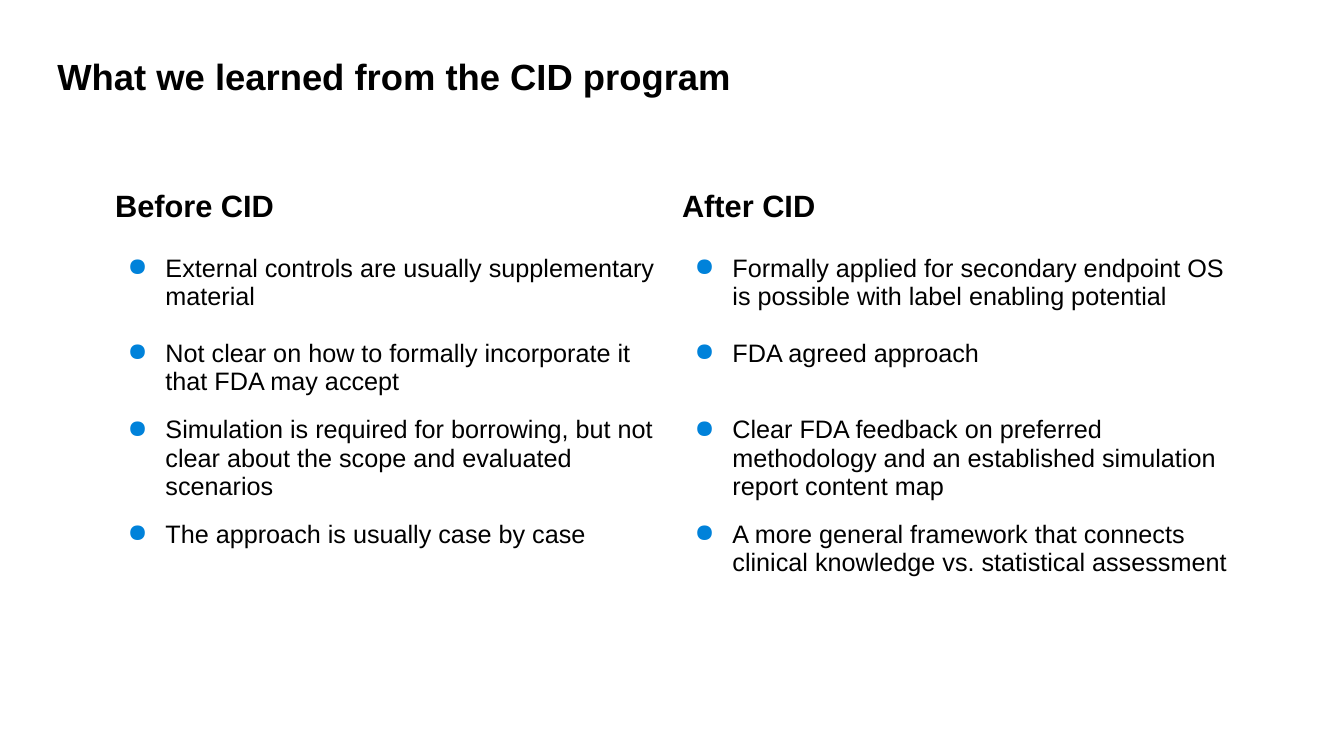
import pptx
import pptx.util
import pptx.dml.color
import pptx.enum.text
from lxml import etree

Pt = pptx.util.Pt

TITLE = "What we learned from the CID program"
HEADINGS = ["Before CID", "After CID"]
ROWS = [
    (
        ["External controls are usually supplementary material",
         "Not clear on how to formally incorporate it that FDA may accept"],
        ["Formally applied for secondary endpoint OS is possible with label enabling potential",
         "FDA agreed approach"],
    ),
    (
        ["Simulation is required for borrowing, but not clear about the scope and evaluated scenarios"],
        ["Clear FDA feedback on preferred methodology and an established simulation report content map"],
    ),
    (
        ["The approach is usually case by case"],
        ["A more general framework that connects clinical knowledge vs. statistical assessment"],
    ),
]
BLACK = "000000"
BULLET_BLUE = "0082DA"
COLUMN_WIDTH = 405
HEADING_HEIGHT = 46.8
ROW_HEIGHT = 57
CELL_MARGIN = 7.2
LINE_GAP = 20.1


def color(value):
    return pptx.dml.color.RGBColor.from_string(value)


def set_font(paragraph, size, bold):
    font = paragraph.font
    font.name = "Arial"
    font.size = Pt(size)
    font.bold = bold
    font.color.rgb = color(BLACK)


def add_bullet(paragraph):
    properties = paragraph._p.get_or_add_pPr()
    properties.set("marL", str(Pt(36)))
    properties.set("indent", str(Pt(-27)))
    namespace = pptx.oxml.ns.qn
    bullet_color = etree.SubElement(properties, namespace("a:buClr"))
    etree.SubElement(bullet_color, namespace("a:srgbClr"), val=BULLET_BLUE)
    etree.SubElement(properties, namespace("a:buChar"), char="●")


def fill_cell(cell, texts, size, bold, bulleted):
    cell.fill.background()
    cell.margin_left = cell.margin_right = Pt(CELL_MARGIN)
    cell.margin_top = cell.margin_bottom = Pt(CELL_MARGIN)
    frame = cell.text_frame
    for index, text in enumerate(texts):
        paragraph = frame.add_paragraph() if index else frame.paragraphs[0]
        paragraph.text = text
        if index:
            paragraph.space_before = Pt(LINE_GAP)
        if bulleted:
            add_bullet(paragraph)
        set_font(paragraph, size, bold)


def add_title(slide):
    title = slide.shapes.title
    title.left, title.top, title.width, title.height = Pt(41), Pt(35.3), Pt(773), Pt(103)
    frame = title.text_frame
    frame.text = TITLE
    frame.word_wrap = True
    frame.auto_size = pptx.enum.text.MSO_AUTO_SIZE.NONE
    frame.vertical_anchor = pptx.enum.text.MSO_ANCHOR.TOP
    frame.margin_left = frame.margin_right = frame.margin_top = frame.margin_bottom = 0
    paragraph = frame.paragraphs[0]
    paragraph.alignment = pptx.enum.text.PP_ALIGN.LEFT
    paragraph.line_spacing = 1.1
    set_font(paragraph, 26, True)


def add_comparison(slide):
    row_count, column_count = len(ROWS) + 1, len(HEADINGS)
    height = HEADING_HEIGHT + ROW_HEIGHT * len(ROWS)
    table = slide.shapes.add_table(
        row_count, column_count, Pt(75), Pt(128), Pt(COLUMN_WIDTH * column_count), Pt(height)
    ).table
    table.first_row = False
    table.horz_banding = False
    for column in table.columns:
        column.width = Pt(COLUMN_WIDTH)
    for index, row in enumerate(table.rows):
        row.height = Pt(ROW_HEIGHT if index else HEADING_HEIGHT)
    for column, heading in enumerate(HEADINGS):
        fill_cell(table.cell(0, column), [heading], 22, True, False)
    for row, cells in enumerate(ROWS, 1):
        for column, texts in enumerate(cells):
            fill_cell(table.cell(row, column), texts, 18, False, True)


def main():
    presentation = pptx.Presentation()
    presentation.slide_width = Pt(960)
    presentation.slide_height = Pt(540)
    slide = presentation.slides.add_slide(presentation.slide_layouts[5])
    add_title(slide)
    add_comparison(slide)
    presentation.save("out.pptx")


if __name__ == "__main__":
    main()
